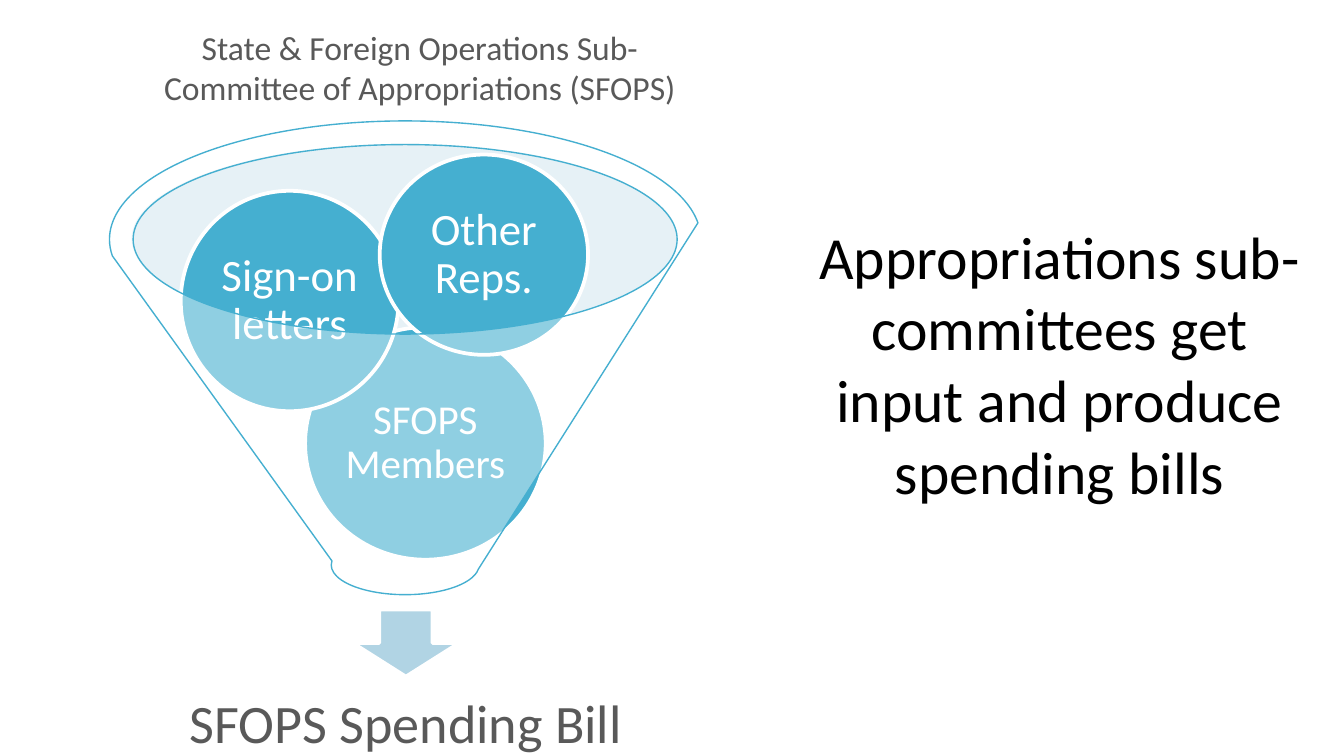
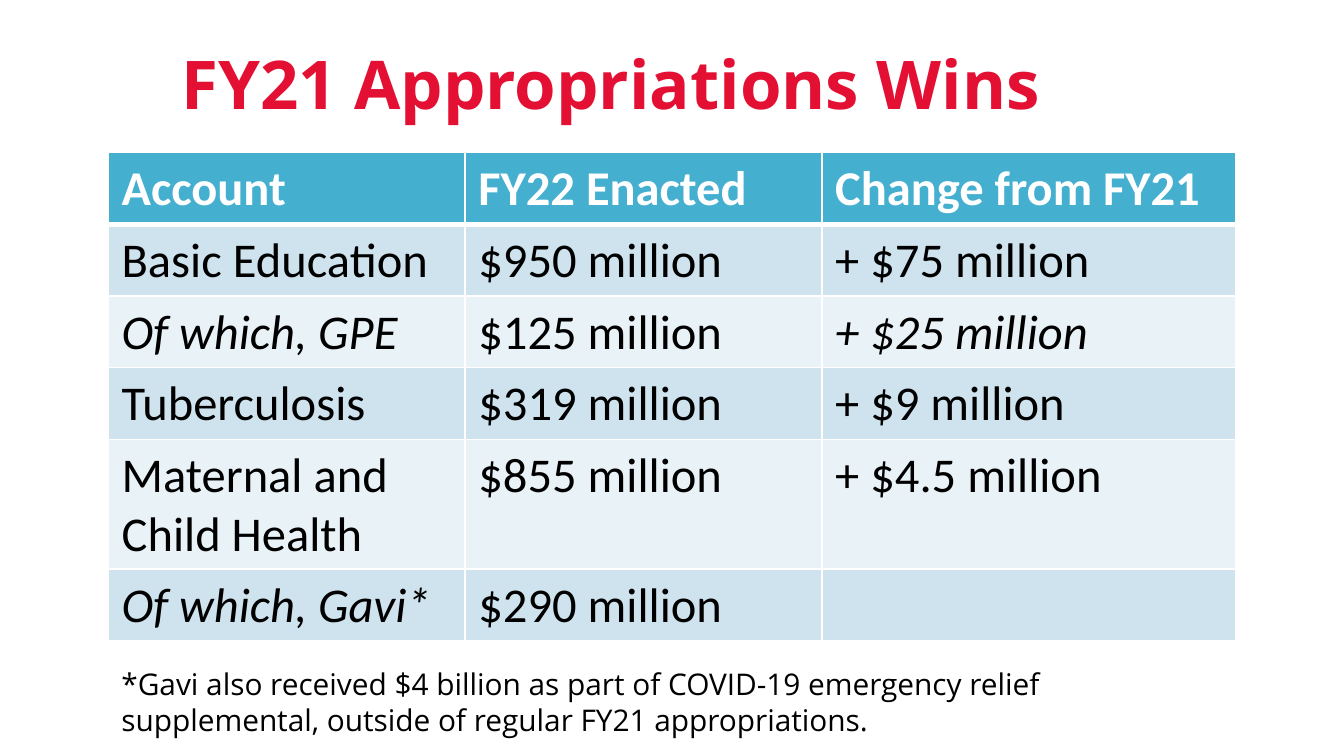
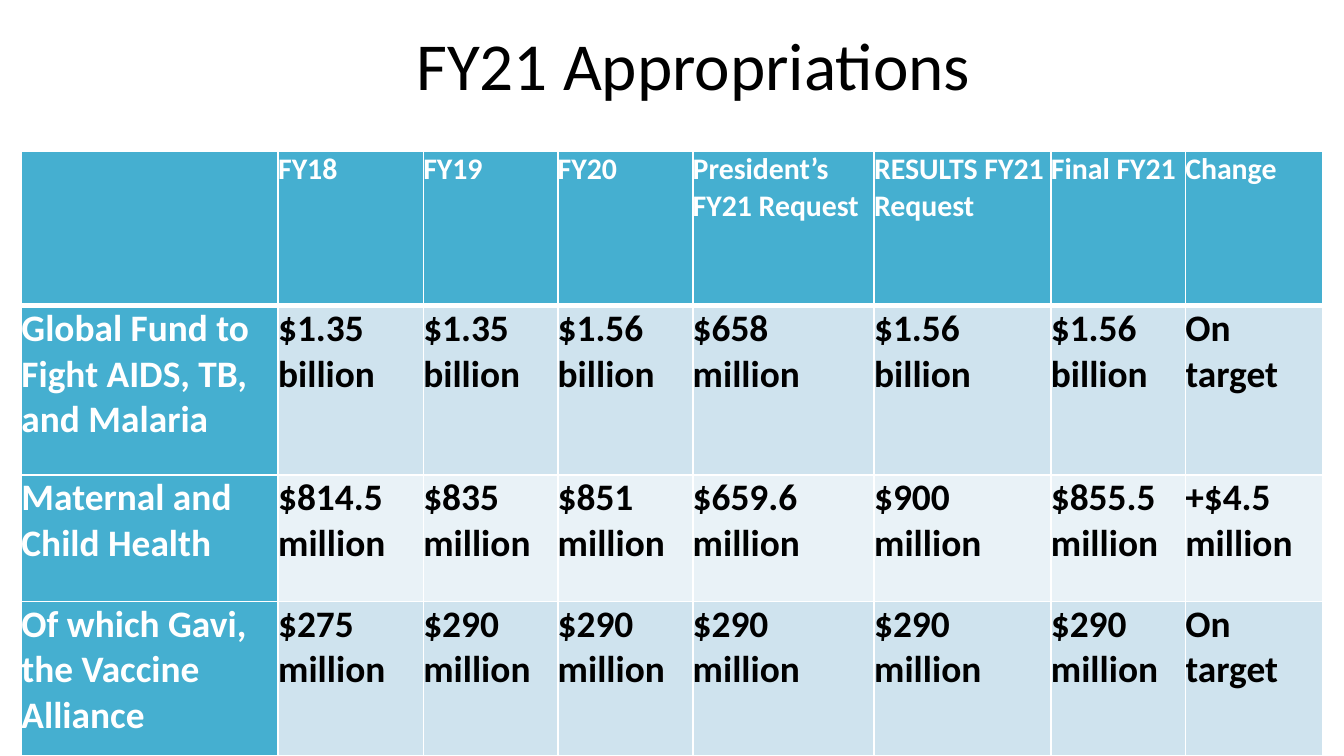
from lxml import etree
from pptx import Presentation
from pptx.dml.color import RGBColor
from pptx.enum.shapes import MSO_SHAPE
from pptx.enum.text import MSO_ANCHOR, PP_ALIGN
from pptx.oxml.ns import qn
from pptx.util import Pt

OVAL, FUNNEL, DOWN_ARROW = MSO_SHAPE.OVAL, MSO_SHAPE.FUNNEL, MSO_SHAPE.DOWN_ARROW
LEFT, CENTER = PP_ALIGN.LEFT, PP_ALIGN.CENTER
TOP, MIDDLE = MSO_ANCHOR.TOP, MSO_ANCHOR.MIDDLE

PX = 4572  # 200 px to the inch
COLORS = {
    "black": "000000", "white": "FFFFFF", "grey": "595959", "red": "E41034",
    "blue": "45AFD0", "mouth": "C1DCE9", "arrow": "B1D4E4",
    "odd row": "CFE3EE", "even row": "E9F2F7",
}
RGB = {name: RGBColor.from_string(code) for name, code in COLORS.items()}
BODY, HEADLINE = "Calibri", "Open Sans"


def write(holder, text, size, color, font=BODY, align=CENTER, anchor=MIDDLE,
          bold=False, italic=False, margins=(20, 10), spacing=None):
    """Fill a text box, shape or table cell with one formatted paragraph."""
    frame = holder.text_frame
    frame.text = text
    frame.word_wrap = True
    area = frame if hasattr(holder, "shape_id") else holder
    area.vertical_anchor = anchor
    area.margin_left = area.margin_right = margins[0] * PX
    area.margin_top = area.margin_bottom = margins[1] * PX
    paragraph = frame.paragraphs[0]
    paragraph.alignment = align
    if spacing:
        paragraph.line_spacing = spacing
    for run in paragraph.runs:
        run.font.name, run.font.size = font, Pt(size)
        run.font.bold, run.font.italic = bold, italic
        run.font.color.rgb = RGB[color]


def build_table(slide, box, widths, heights, rows, header_size, body_size,
                margins, label_column=False, italics=()):
    """Add a table with a blue header, banded rows and white rules."""
    holder = slide.shapes.add_table(len(rows), len(widths), *[v * PX for v in box])
    table = holder.table
    table.first_col = label_column
    for column, width in zip(table.columns, widths):
        column.width = width * PX
    for row, height in zip(table.rows, heights):
        row.height = height * PX
    holder.height = box[3] * PX
    for r, texts in enumerate(rows):
        for c, text in enumerate(texts):
            cell = table.cell(r, c)
            blue = r == 0 or (label_column and c == 0)
            write(cell, text, body_size if r else header_size,
                  "white" if blue else "black", align=LEFT, anchor=TOP,
                  bold=r == 0 or label_column, italic=(r, c) in italics,
                  margins=margins)
            # The rule under the header is three times as thick
            for side in ("L", "R", "T", "B"):
                thick = (r, side) in ((0, "B"), (1, "T"))
                rule = etree.SubElement(cell._tc.get_or_add_tcPr(), qn(f"a:ln{side}"),
                                        w=str(Pt(3 if thick else 1)))
                paint = etree.SubElement(rule, qn("a:solidFill"))
                etree.SubElement(paint, qn("a:srgbClr"), val=COLORS["white"])
            cell.fill.solid()
            band = "odd row" if r % 2 else "even row"
            cell.fill.fore_color.rgb = RGB["blue" if blue else band]


deck = Presentation()
deck.slide_width, deck.slide_height = 2000 * PX, 1125 * PX
process, wins, history = [deck.slides.add_slide(deck.slide_layouts[6]) for _ in range(3)]

# Slide 1: funnel, back to front: kind, box, fill, opacity, line, line width, label, size
funnel_parts = [
    (OVAL, (196, 214, 812, 282), "mouth", 40, None, 0, "", 0),
    (DOWN_ARROW, (525, 907, 158, 100), "arrow", 100, "white", 2, "", 0),
    (OVAL, (454, 487, 358, 346), "blue", 100, "white", 2, "SFOPS Members", 22),
    (OVAL, (269, 284, 324, 328), "blue", 100, "white", 2, "Sign-on letters", 24),
    (OVAL, (565, 230, 310, 298), "blue", 100, "white", 2, "Other Reps.", 24),
    (FUNNEL, (163, 180, 880, 705), "white", 40, "blue", 0.75, "", 0),
]
for kind, box, fill, opacity, line, line_width, label, size in funnel_parts:
    part = process.shapes.add_shape(kind, *[v * PX for v in box])
    part.shadow.inherit = False
    part.fill.solid()
    part.fill.fore_color.rgb = RGB[fill]
    if opacity < 100:
        color = part._element.spPr.find(qn("a:solidFill"))[0]
        etree.SubElement(color, qn("a:alpha"), val=str(opacity * 1000))
    if line:
        part.line.color.rgb = RGB[line]
        part.line.width = Pt(line_width)
    else:
        part.line.fill.background()
    if label:
        write(part, label, size, "white", margins=(6, 6), spacing=0.9)

# Titles, captions and footnote of all slides
passages = [
    (process, (1188, 268, 778, 544),
     "Appropriations sub-committees get input and produce spending bills",
     32, "black", {}),
    (process, (226, 987, 756, 188), "SFOPS Spending Bill", 29, "grey",
     {"margins": (46, 46), "spacing": 0.9}),
    (process, (218, 0, 814, 200),
     "State & Foreign Operations Sub-Committee of Appropriations (SFOPS)",
     18, "grey", {}),
    (wins, (100, 29, 1618, 188), "FY21 Appropriations Wins", 36, "red",
     {"font": HEADLINE, "bold": True}),
    (wins, (161, 974, 1678, 140),
     "*Gavi also received $4 billion as part of COVID-19 emergency relief "
     "supplemental, outside of regular FY21 appropriations.",
     16, "black", {"font": HEADLINE, "align": LEFT}),
    (history, (368, 0, 1328, 188), "FY21 Appropriations", 36, "black", {}),
]
for slide, box, text, size, color, style in passages:
    write(slide.shapes.add_textbox(*[v * PX for v in box]), text, size, color, **style)

# Slide 2: enacted amounts
build_table(wins, (161, 227, 1678, 736), (531, 531, 616), [82] * 6, [
    ("Account", "FY22 Enacted", "Change from FY21"),
    ("Basic Education", "$950 million", "+ $75 million"),
    ("Of which, GPE", "$125 million", "+ $25 million"),
    ("Tuberculosis", "$319 million", "+ $9 million"),
    ("Maternal and Child Health", "$855 million", "+ $4.5 million"),
    ("Of which, Gavi*", "$290 million", ""),
], 26, 26, (20, 10), italics=((2, 0), (2, 2), (5, 0)))

# Slide 3: amounts by fiscal year
build_table(history, (32, 225, 1936, 900), (382, 216, 200, 201, 270, 263, 200, 204),
            (230, 252, 188, 230), [
    ("", "FY18", "FY19", "FY20", "President’s FY21 Request",
     "RESULTS FY21 Request", "Final FY21", "Change"),
    ("Global Fund to Fight AIDS, TB, and Malaria", "$1.35 billion", "$1.35 billion",
     "$1.56 billion", "$658 million", "$1.56 billion", "$1.56 billion", "On target"),
    ("Maternal and Child Health", "$814.5 million", "$835 million", "$851 million",
     "$659.6 million", "$900 million", "$855.5 million", "+$4.5 million"),
    ("Of which Gavi, the Vaccine Alliance", "$275 million",
     *["$290 million"] * 5, "On target"),
], 16, 20, (0, 0), label_column=True)

deck.save("out.pptx")
